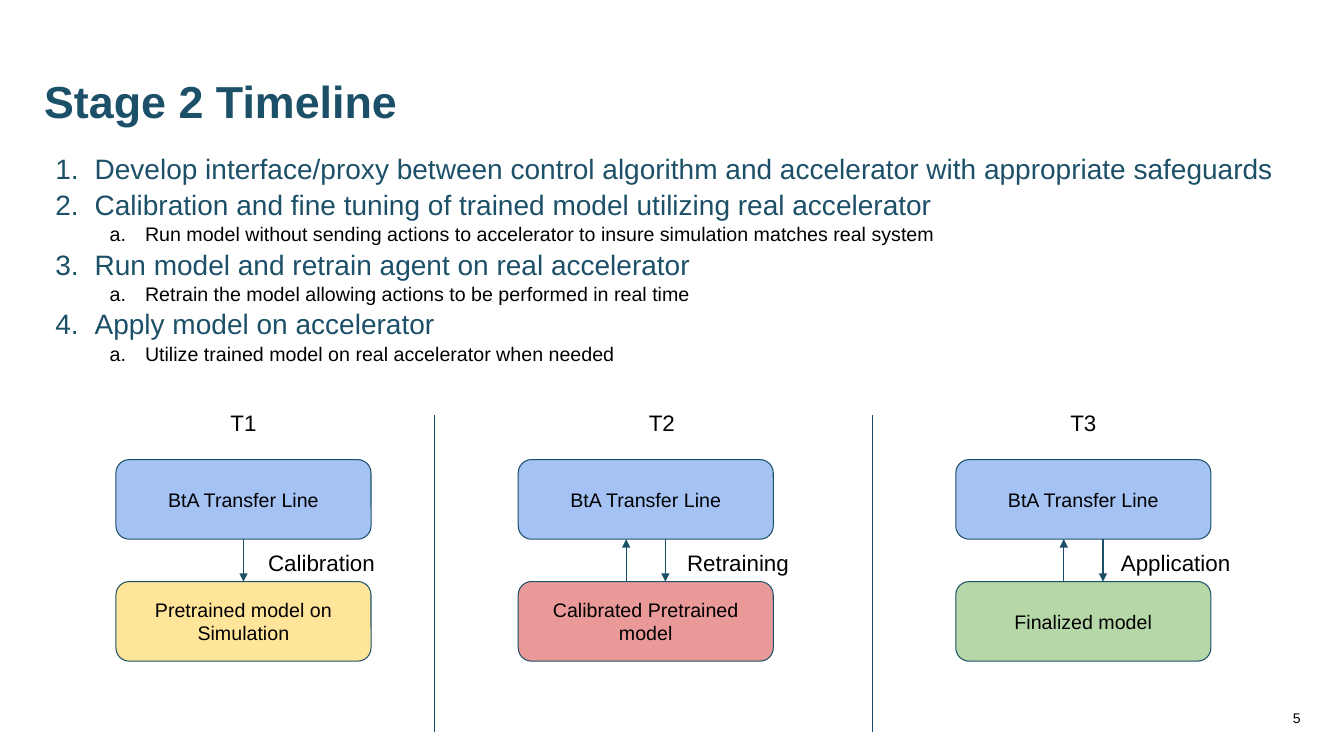
from collections import namedtuple

from lxml import etree
from pptx import Presentation
from pptx.dml.color import RGBColor
from pptx.enum.shapes import MSO_CONNECTOR as Connector, MSO_SHAPE as Shape
from pptx.enum.text import MSO_ANCHOR as Anchor, PP_ALIGN as Align
from pptx.oxml.ns import qn
from pptx.util import Inches, Pt

WIDTH, HEIGHT = Inches(13.33), Inches(7.5)
FONT = "Arial"
TEAL, BLACK, BLUE = "1C5068", "000000", "A4C2F4"

# Horizontal and vertical lengths are percentages of the slide's size.
BOX_WIDTH, BOX_HEIGHT = 18.98, 10.53
LINE_TOP, MODEL_TOP = 60.8, 76.93
LABEL_WIDTH, LABEL_HEIGHT = 10.35, 5.73
LABEL_TOP = 52.8
ARROW_SHIFT = 1.46
DIVIDERS = (32.33, 64.93)

Stage = namedtuple("Stage", "name left label_shift model fill caption caption_left two_way")
STAGES = [
    Stage("T1", 8.63, 0, "Pretrained model on Simulation", "FFE599", "Calibration", 18.75, False),
    Stage("T2", 38.56, 1.2, "Calibrated Pretrained model", "EA9999", "Retraining", 49.74, True),
    Stage("T3", 71.12, 0, "Finalized model", "B6D7A8", "Application", 82.3, True),
]
STEPS = [
    (0, "Develop interface/proxy between control algorithm and accelerator with appropriate safeguards"),
    (0, "Calibration and fine tuning of trained model utilizing real accelerator"),
    (1, "Run model without sending actions to accelerator to insure simulation matches real system"),
    (0, "Run model and retrain agent on real accelerator"),
    (1, "Retrain the model allowing actions to be performed in real time"),
    (0, "Apply model on accelerator"),
    (1, "Utilize trained model on real accelerator when needed"),
]
# Per level: numbering, margin, hanging indent, text size, colour
LEVELS = [
    ("arabicPeriod", 0.5, -0.39, 20, TEAL),
    ("alphaLcPeriod", 1, -0.35, 14, BLACK),
]


def across(share):
    return round(WIDTH * share / 100)


def down(share):
    return round(HEIGHT * share / 100)


def place(left, top, width, height):
    return across(left), down(top), across(width), down(height)


def colour(value):
    return RGBColor.from_string(value)


def add_span(para, text, size, tint=BLACK, bold=False):
    span = para.add_run()
    span.text = text
    span.font.name = FONT
    span.font.size = Pt(size)
    span.font.bold = bold
    span.font.color.rgb = colour(tint)


def set_frame(frame, anchor, inset):
    frame.word_wrap = True
    frame.vertical_anchor = anchor
    frame.margin_left = frame.margin_right = Inches(0.1)
    frame.margin_top = frame.margin_bottom = Inches(inset)


def add_text(page, area, text, size, tint=BLACK, bold=False,
             align=Align.CENTER, anchor=Anchor.TOP, inset=0.1):
    box = page.shapes.add_textbox(*place(*area))
    set_frame(box.text_frame, anchor, inset)
    para = box.text_frame.paragraphs[0]
    para.alignment = align
    add_span(para, text, size, tint, bold)
    return para


def add_numbering(para, scheme, margin, indent, tint):
    properties = para._p.get_or_add_pPr()
    properties.set("marL", str(Inches(margin)))
    properties.set("indent", str(Inches(indent)))
    bullet_colour = etree.SubElement(properties, qn("a:buClr"))
    etree.SubElement(bullet_colour, qn("a:srgbClr"), val=tint)
    etree.SubElement(properties, qn("a:buFont"), typeface=FONT)
    etree.SubElement(properties, qn("a:buAutoNum"), type=scheme)


def add_steps(page):
    box = page.shapes.add_textbox(*place(2.55, 19.2, 94.97, 71.33))
    frame = box.text_frame
    set_frame(frame, Anchor.TOP, 0.05)
    for index, (level, text) in enumerate(STEPS):
        scheme, margin, indent, size, tint = LEVELS[level]
        para = frame.add_paragraph() if index else frame.paragraphs[0]
        para.level = level
        para.line_spacing = 1.05
        add_numbering(para, scheme, margin, indent, tint)
        add_span(para, text, size, tint)


def add_box(page, left, top, text, fill):
    box = page.shapes.add_shape(Shape.ROUNDED_RECTANGLE, *place(left, top, BOX_WIDTH, BOX_HEIGHT))
    box.shadow.inherit = False
    box.fill.solid()
    box.fill.fore_color.rgb = colour(fill)
    box.line.color.rgb = colour(TEAL)
    box.line.width = Pt(0.75)
    set_frame(box.text_frame, Anchor.MIDDLE, 0.1)
    para = box.text_frame.paragraphs[0]
    para.alignment = Align.CENTER
    add_span(para, text, 14)
    return box


def add_line(page, x, start, end, arrow=False):
    line = page.shapes.add_connector(Connector.STRAIGHT, across(x), down(start), across(x), down(end))
    line.line.color.rgb = colour(TEAL)
    line.line.width = Pt(0.75)
    if arrow:
        etree.SubElement(line.line._get_or_add_ln(), qn("a:tailEnd"), type="triangle")
    etree.SubElement(line._element.spPr, qn("a:effectLst"))
    return line


def add_stage(page, stage):
    middle = stage.left + BOX_WIDTH / 2
    line_bottom = LINE_TOP + BOX_HEIGHT
    label_left = middle - LABEL_WIDTH / 2 + stage.label_shift
    add_text(page, (label_left, LABEL_TOP, LABEL_WIDTH, LABEL_HEIGHT), stage.name, 16)
    transfer_line = add_box(page, stage.left, LINE_TOP, "BtA Transfer Line", BLUE)
    model = add_box(page, stage.left, MODEL_TOP, stage.model, stage.fill)
    if stage.two_way:
        add_line(page, middle - ARROW_SHIFT, MODEL_TOP, line_bottom, arrow=True)
        add_line(page, middle + ARROW_SHIFT, line_bottom, MODEL_TOP, arrow=True)
    else:
        arrow = add_line(page, middle, line_bottom, MODEL_TOP, arrow=True)
        arrow.begin_connect(transfer_line, 2)
        arrow.end_connect(model, 0)
    add_text(page, (stage.caption_left, line_bottom, LABEL_WIDTH, LABEL_HEIGHT), stage.caption, 16)


def main():
    deck = Presentation()
    deck.slide_width, deck.slide_height = WIDTH, HEIGHT
    page = deck.slides.add_slide(deck.slide_layouts[6])
    title = add_text(page, (2.55, 7.73, 90.62, 9.87), "Stage 2 Timeline", 32, TEAL,
                     bold=True, align=Align.LEFT, anchor=Anchor.BOTTOM, inset=0.05)
    title.line_spacing = 0.9
    add_steps(page)
    add_text(page, (75, 92.27, 22.5, 5.33), "5", 10,
             align=Align.RIGHT, anchor=Anchor.MIDDLE, inset=0.05)
    for x in DIVIDERS:
        add_line(page, x, 54.93, 96.8)
    for stage in STAGES:
        add_stage(page, stage)
    deck.save("out.pptx")


if __name__ == "__main__":
    main()
